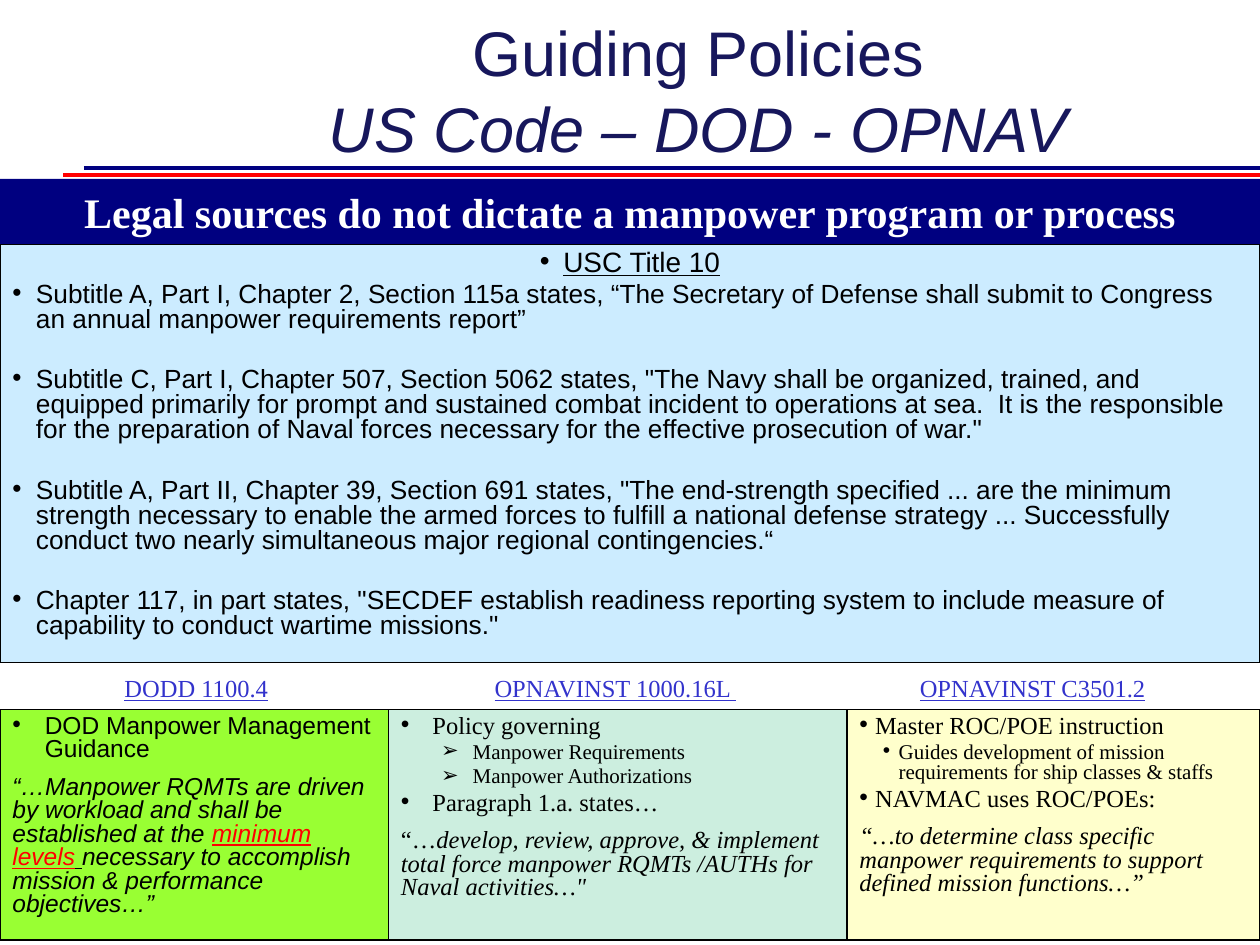
from pptx import Presentation
from pptx.dml.color import RGBColor
from pptx.enum.shapes import MSO_CONNECTOR, MSO_SHAPE
from pptx.enum.text import MSO_ANCHOR, MSO_AUTO_SIZE, PP_ALIGN
from pptx.oxml.ns import qn
from pptx.util import Pt
from lxml.etree import SubElement

COLORS = {
    "title": "17175C", "navy": "000080", "red": "FF0000", "black": "000000",
    "white": "FFFFFF", "sky": "CCECFF", "lime": "99FF33", "mint": "CCEEDF",
    "cream": "FFFFCC", "link": "3333CC",
}
SANS, SERIF = "Arial", "Times New Roman"
TIGHT = 0.8  # line spacing of the body text


def rgb(name):
    return RGBColor.from_string(COLORS[name])


def set_font(font, name, size, color, **styles):
    font.name, font.size = name, Pt(size)
    font.color.rgb = rgb(color)
    for style, value in styles.items():
        setattr(font, style, value)


def set_bullet(paragraph, char, margin, hanging):
    properties = paragraph._p.get_or_add_pPr()
    properties.set("marL", str(Pt(margin)))
    properties.set("indent", str(-Pt(hanging)))
    SubElement(properties, qn("a:buFont")).set("typeface", SANS)
    SubElement(properties, qn("a:buChar")).set("char", char)


def add_paragraph(frame, runs, font, size, bullet=None, gap=None,
                  align=PP_ALIGN.LEFT, **styles):
    """Add runs of (text, styles); gap defaults to a fifth of the size."""
    first = not frame.paragraphs[0].runs
    paragraph = frame.paragraphs[0] if first else frame.add_paragraph()
    if bullet:
        set_bullet(paragraph, *bullet)
    paragraph.alignment = align
    paragraph.line_spacing = TIGHT
    if not first:
        paragraph.space_before = Pt(size * 0.2 if gap is None else gap)
    set_font(paragraph.font, font, size, "black", **styles)
    for text, run_styles in [(runs, {})] if isinstance(runs, str) else runs:
        run = paragraph.add_run()
        run.text = text
        set_font(run.font, font, size, **{"color": "black", **styles, **run_styles})


def add_panel(slide, box, fill, outlined=True):
    shape = slide.shapes.add_shape(MSO_SHAPE.RECTANGLE, *map(Pt, box))
    shape.shadow.inherit = False
    shape.fill.solid()
    shape.fill.fore_color.rgb = rgb(fill)
    if outlined:
        shape.line.color.rgb = rgb("black")
        shape.line.width = Pt(0.75)
    else:
        shape.line.fill.background()
    frame = shape.text_frame
    frame.word_wrap = True
    frame.vertical_anchor = MSO_ANCHOR.TOP
    return frame


def add_rule(slide, left, right, y, color):
    rule = slide.shapes.add_connector(
        MSO_CONNECTOR.STRAIGHT, Pt(left), Pt(y), Pt(right), Pt(y))
    rule.line.color.rgb = rgb(color)
    rule.line.width = Pt(2.5)
    SubElement(rule._element.spPr, qn("a:effectLst"))


def add_title(slide, box):
    title = slide.shapes.title
    title.left, title.top, title.width, title.height = map(Pt, box)
    frame = title.text_frame
    frame.word_wrap = True
    frame.auto_size = MSO_AUTO_SIZE.NONE
    frame.vertical_anchor = MSO_ANCHOR.MIDDLE
    paragraph = frame.paragraphs[0]
    paragraph.alignment = PP_ALIGN.CENTER
    set_font(paragraph.font, SANS, 36, "title")
    top_line = paragraph.add_run()
    top_line.text = "Guiding Policies"
    set_font(top_line.font, SANS, 36, "title")
    paragraph.add_line_break()
    second_line = paragraph.add_run()
    second_line.text = "US Code – DOD - OPNAV"
    set_font(second_line.font, SANS, 36, "title", italic=True)


def add_banner(slide, box):
    frame = add_panel(slide, box, "navy", outlined=False)
    frame.word_wrap = False
    frame.vertical_anchor = MSO_ANCHOR.MIDDLE
    paragraph = frame.paragraphs[0]
    paragraph.text = "Legal sources do not dictate a manpower program or process"
    paragraph.alignment = PP_ALIGN.CENTER
    set_font(paragraph.font, SERIF, 24, "white", bold=True)


def add_us_code(slide, box):
    frame = add_panel(slide, box, "sky")
    bullet = ("•", 13.5, 13.5)
    add_paragraph(frame, "USC Title 10", SANS, 16, bullet,
                  align=PP_ALIGN.CENTER, underline=True)
    sections = [
        "Subtitle A, Part I, Chapter 2, Section 115a states, “The Secretary of Defense "
        "shall submit to Congress an annual manpower requirements report”",
        "Subtitle C, Part I, Chapter 507, Section 5062 states, \"The Navy shall be "
        "organized, trained, and equipped primarily for prompt and sustained combat "
        "incident to operations at sea.  It is the responsible for the preparation of "
        "Naval forces necessary for the effective prosecution of war.\"",
        "Subtitle A, Part II, Chapter 39, Section 691 states, \"The end-strength "
        "specified ... are the minimum strength necessary to enable the armed forces to "
        "fulfill a national defense strategy ... Successfully conduct two nearly "
        "simultaneous major regional contingencies.“",
        "Chapter 117, in part states, \"SECDEF establish readiness reporting system to "
        "include measure of capability to conduct wartime missions.\"",
    ]
    for index, section in enumerate(sections):
        add_paragraph(frame, section, SANS, 15, bullet, gap=20 if index else 3)


def add_label(slide, box, text, tail=""):
    frame = slide.shapes.add_textbox(*map(Pt, box)).text_frame
    frame.word_wrap = False
    add_paragraph(frame, [(text + tail, {"color": "link"})], SERIF, 14, underline=True)


def add_dod_column(slide, box):
    frame = add_panel(slide, box, "lime")
    add_paragraph(frame, "DOD Manpower Management Guidance", SANS, 14, ("•", 18.5, 18.5))
    add_paragraph(frame, [
        ("“…Manpower RQMTs are driven by workload and shall be established at the ", {}),
        ("minimum levels", {"color": "red", "underline": True}),
        (" ", {"underline": True}),
        ("necessary to accomplish mission & performance objectives…”", {}),
    ], SANS, 14, gap=8, italic=True)


def add_opnav_column(slide, box):
    frame = add_panel(slide, box, "mint")
    bullet, arrow = ("•", 18, 18), ("➢", 41, 18)
    add_paragraph(frame, "Policy governing", SERIF, 14, bullet)
    for topic in ("Manpower Requirements", "Manpower Authorizations"):
        add_paragraph(frame, topic, SERIF, 12, arrow)
    add_paragraph(frame, "Paragraph 1.a. states…", SERIF, 14, bullet)
    add_paragraph(frame, [
        ("“…", {}),
        ("develop, review, approve, & implement total force manpower RQMTs /AUTHs for "
         "Naval activities…\"", {"italic": True}),
    ], SERIF, 14, gap=8)


def add_roc_column(slide, box):
    frame = add_panel(slide, box, "cream")
    bullet = ("•", 9, 9)
    add_paragraph(frame, "Master ROC/POE instruction", SERIF, 14, bullet)
    add_paragraph(frame, "Guides development of mission requirements for ship classes "
                  "& staffs", SERIF, 12, ("•", 22.5, 9))
    add_paragraph(frame, "NAVMAC uses ROC/POEs:", SERIF, 14, bullet)
    add_paragraph(frame, "“…to determine class specific manpower requirements to support "
                  "defined mission functions…”", SERIF, 14, gap=8, italic=True)


def main():
    presentation = Presentation()
    presentation.slide_width, presentation.slide_height = Pt(720), Pt(540)
    slide = presentation.slides.add_slide(presentation.slide_layouts[5])

    # Heading
    add_rule(slide, 48, 720, 96, "navy")
    add_rule(slide, 36, 720, 100, "red")
    add_title(slide, (78, 6, 642, 90))
    add_banner(slide, (0, 102.25, 720, 37.5))

    # Law
    add_us_code(slide, (0, 139.75, 720, 239))

    # Directives
    top, height = 405.25, 132
    add_dod_column(slide, (0, top, 223, height))
    add_opnav_column(slide, (222, top, 264, height))
    add_roc_column(slide, (484, top, 236, height))
    add_label(slide, (518.5, 384.5, 146, 21), "OPNAVINST C3501.2")
    add_label(slide, (275.5, 384.5, 156, 21), "OPNAVINST 1000.16L", tail=" ")
    add_label(slide, (64, 384.5, 103, 21), "DODD 1100.4")

    presentation.save("out.pptx")


if __name__ == "__main__":
    main()
